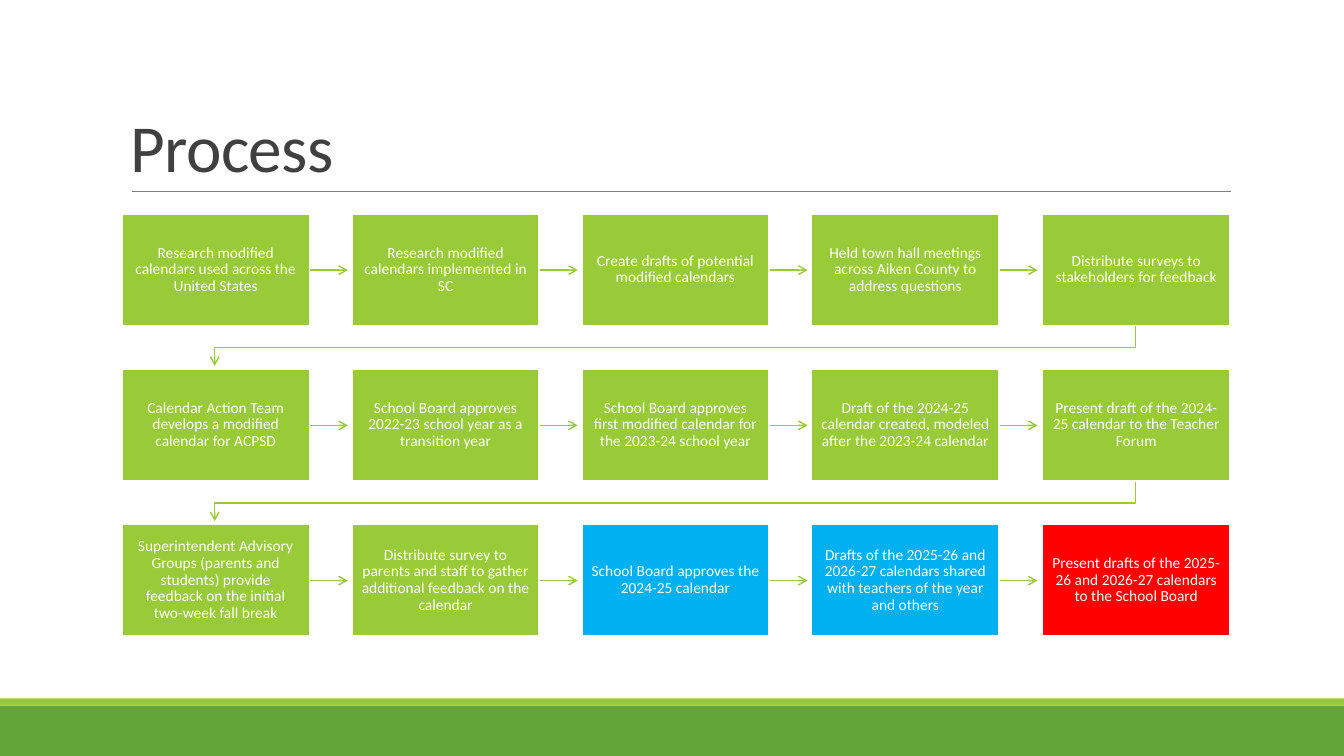
from dataclasses import dataclass

from lxml.etree import SubElement as Sub
from pptx import Presentation
from pptx.dml.color import RGBColor as Color
from pptx.enum.shapes import MSO_CONNECTOR as Link, MSO_SHAPE as Kind
from pptx.enum.text import MSO_ANCHOR as Anchor, PP_ALIGN as Align
from pptx.oxml.ns import qn
from pptx.util import Pt

SCALE = 9144  # EMU per px, 100 px to the inch


@dataclass(frozen=True)
class Theme:
    font: str = "Calibri"
    lime: str = "99CB38"
    green: str = "63A537"
    blue: str = "00B0F0"
    red: str = "FF0000"
    white: str = "FFFFFF"
    ink: str = "404040"
    gray: str = "808080"
    head: int = 48
    body: int = 11
    edge: float = 1.25
    wire: float = 1
    rule: float = 0.5


def emu(*nums):
    return [num * SCALE for num in nums]


class Deck:
    def __init__(self, theme, wide, high):
        self.theme = theme
        self.show = Presentation()
        self.show.slide_width, self.show.slide_height = emu(wide, high)
        self.slide = self.show.slides.add_slide(self.show.slide_layouts[6])
        self.shapes = self.slide.shapes

    def rect(self, x, y, w, h, fill, edge=None):
        shape = self.shapes.add_shape(Kind.RECTANGLE, *emu(x, y, w, h))
        shape.shadow.inherit = False
        shape.fill.solid()
        shape.fill.fore_color.rgb = Color.from_string(fill)
        if edge:
            self.stroke(shape, edge, self.theme.edge)
        else:
            shape.line.fill.background()
        return shape

    def stroke(self, shape, color, width):
        shape.line.color.rgb = Color.from_string(color)
        shape.line.width = Pt(width)

    def line(self, start, end, color, width):
        wire = self.shapes.add_connector(Link.STRAIGHT, *emu(*start, *end))
        self.stroke(wire, color, width)
        Sub(wire.element.spPr, qn("a:effectLst"))
        return wire

    def bend(self, start, *points):
        route = self.shapes.build_freeform(*start, scale=SCALE)
        route.add_line_segments(points, close=False)
        wire = route.convert_to_shape()
        wire.shadow.inherit = False
        wire.fill.background()
        self.stroke(wire, self.theme.lime, self.theme.wire)
        return wire

    def tip(self, wire):
        Sub(wire.element.spPr.find(qn("a:ln")), qn("a:tailEnd"), type="arrow")

    def label(self, shape, text, size, color, gap):
        frame = shape.text_frame
        frame.word_wrap = True
        frame.text = text
        para = frame.paragraphs[0]
        para.line_spacing = gap
        font = para.runs[0].font
        font.name, font.size = self.theme.font, Pt(size)
        font.color.rgb = Color.from_string(color)
        return frame

    def title(self, x, y, w, h, text):
        box = self.shapes.add_textbox(*emu(x, y, w, h))
        frame = self.label(box, text, self.theme.head, self.theme.ink, 0.85)
        frame.vertical_anchor = Anchor.BOTTOM
        for props in box.element.iter(qn("a:rPr")):
            props.set("spc", "-50")

    def step(self, x, y, w, h, text, fill):
        box = self.rect(x, y, w, h, fill, self.theme.white)
        frame = self.label(box, text, self.theme.body, self.theme.white, 0.9)
        frame.vertical_anchor = Anchor.MIDDLE
        frame.paragraphs[0].alignment = Align.CENTER
        (frame.margin_left, frame.margin_top,
         frame.margin_right, frame.margin_bottom) = emu(9, 9, 9, 9)


STEPS = [
    ["Research modified calendars used across the United States",
     "Research modified calendars implemented in SC",
     "Create drafts of potential modified calendars",
     "Held town hall meetings across Aiken County to address questions",
     "Distribute surveys to stakeholders for feedback"],
    ["Calendar Action Team develops a modified calendar for ACPSD",
     "School Board approves 2022-23 school year as a transition year",
     "School Board approves first modified calendar for the 2023-24 school year",
     "Draft of the 2024-25 calendar created, modeled after the 2023-24 calendar",
     "Present draft of the 2024-25 calendar to the Teacher Forum"],
    ["Superintendent Advisory Groups (parents and students) provide feedback "
     "on the initial two-week fall break",
     "Distribute survey to parents and staff to gather additional feedback "
     "on the calendar",
     "School Board approves the 2024-25 calendar",
     "Drafts of the 2025-26 and 2026-27 calendars shared with teachers "
     "of the year and others",
     "Present drafts of the 2025-26 and 2026-27 calendars to the School Board"],
]
LEFT, TOP, WIDE, HIGH = 121, 212, 186, 111
SPAN, DROP = 913, 154  # first to last column, row to row


def main():
    theme = Theme()
    deck = Deck(theme, 1333, 750)
    fills = {(2, 2): theme.blue, (2, 3): theme.blue, (2, 4): theme.red}

    # Footer bands, title and rule
    deck.rect(0, 700, 1333, 50, theme.green)
    deck.rect(0, 693, 1333, 7, theme.lime)
    deck.line((131, 190), (1221, 190), theme.gray, theme.rule)
    deck.title(120, 31, 1100, 159, "Process")

    # Steps, each with the arrow to the next one
    for row, texts in enumerate(STEPS):
        y = TOP + row * DROP
        last = len(texts) - 1
        for col, text in enumerate(texts):
            x = LEFT + SPAN * col // last
            if col < last:
                mid = y + HIGH // 2 + 1
                deck.tip(deck.line((x + WIDE - 1, mid), (x + WIDE + 38, mid),
                                   theme.lime, theme.wire))
            elif row < len(STEPS) - 1:
                foot, home = y + HIGH, LEFT + WIDE // 2 - 1
                out = x + WIDE // 2 - 1
                deck.tip(deck.bend((out, foot), (out, foot + 22),
                                   (home, foot + 22), (home, foot + 40)))
            deck.step(x, y, WIDE, HIGH, text, fills.get((row, col), theme.lime))

    deck.show.save("out.pptx")


if __name__ == "__main__":
    main()
